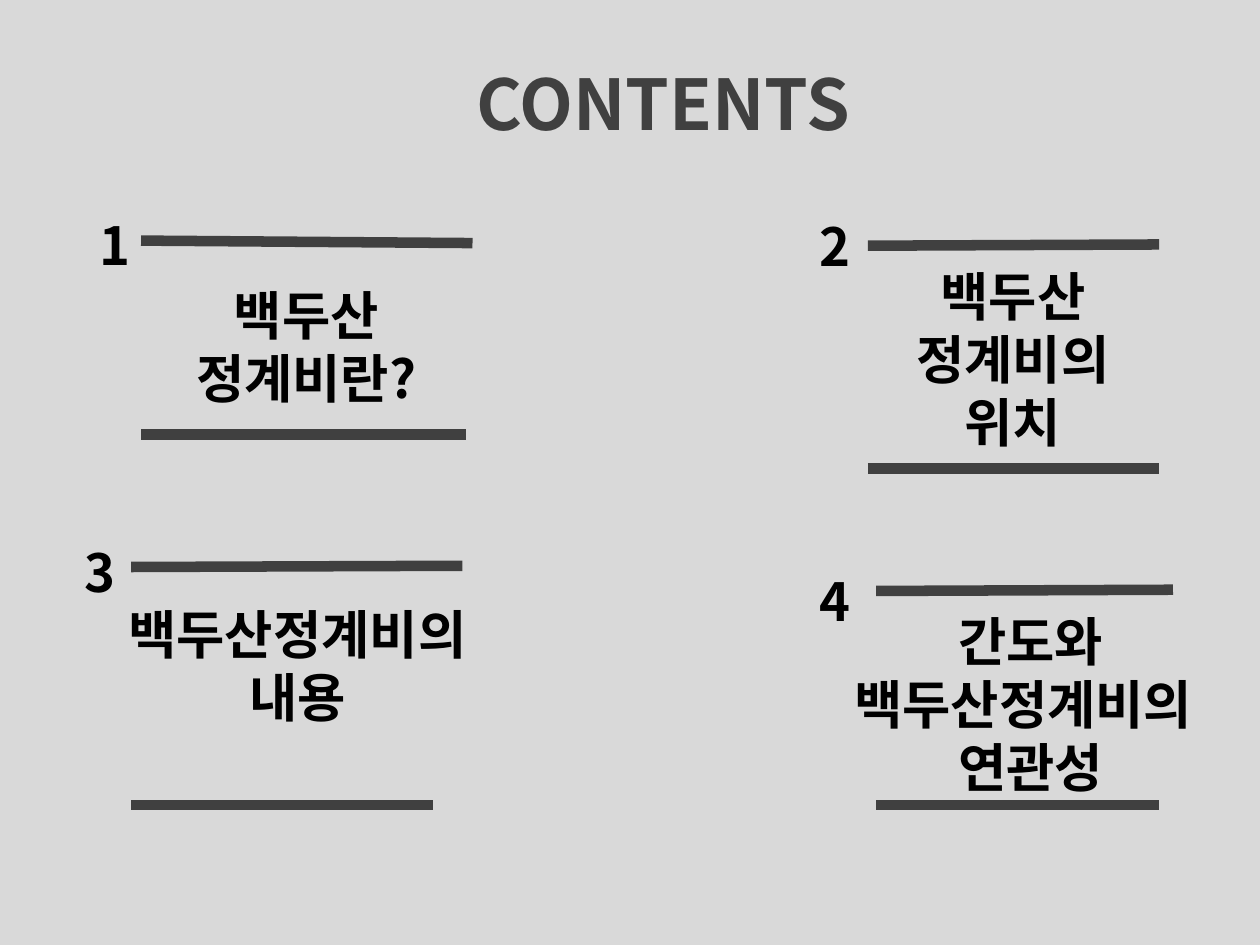
from dataclasses import dataclass

from lxml import etree
from pptx import Presentation
from pptx.dml.color import RGBColor
from pptx.enum.lang import MSO_LANGUAGE_ID
from pptx.enum.shapes import MSO_CONNECTOR
from pptx.enum.text import MSO_ANCHOR, MSO_AUTO_SIZE, PP_ALIGN
from pptx.oxml.ns import qn
from pptx.util import Pt

LEFT, CENTER = PP_ALIGN.LEFT, PP_ALIGN.CENTER
TOP = MSO_ANCHOR.TOP
NO_FIT = MSO_AUTO_SIZE.NONE
STRAIGHT = MSO_CONNECTOR.STRAIGHT
KOREAN = MSO_LANGUAGE_ID.KOREAN


@dataclass(frozen=True)
class Theme:
    """Colours, font and sizes of the deck."""
    background: RGBColor = RGBColor(0xD9, 0xD9, 0xD9)
    dark: RGBColor = RGBColor(0x40, 0x40, 0x40)
    ink: RGBColor = RGBColor(0, 0, 0)
    font: str = "Noto Sans CJK KR"
    title_size: int = 40
    topic_size: int = 30
    rule_width: int = 6


@dataclass(frozen=True)
class Topic:
    """One contents entry: box (left, top, width, height) and offsets in it."""
    lines: tuple
    box: tuple
    heading: tuple
    rule_left: float
    upper_rule: tuple
    lower_width: float


THEME = Theme()
HEADING_SIZE = (219, 153)
NUMBER_SIZE = (39, 44)
TOPICS = (
    Topic(("백두산", "정계비란?"), (49.7, 118, 220.3, 130.4),
          (15.8, 40.4), 30.9, (19.5, 20.9), 185.8),
    Topic(("백두산", "정계비의", "위치"), (461.5, 118.8, 200.9, 149),
          (7.9, 28.8), 34.5, (21.6, 20.9), 166.4),
    Topic(("백두산정계비의 내용",), (41, 305.3, 223.2, 154.7),
          (19.5, 35.3), 33.9, (18.7, 18), 172.8),
    Topic(("간도와 백두산정계비의 ", "연관성"), (461.5, 321.8, 208.8, 138.2),
          (18, 22.4), 39.2, (15.9, 15.2), 161.7),
)


def write_text(frame, lines, *, size, color, align=LEFT):
    """Fill a text frame with one bold paragraph per line."""
    frame.auto_size = NO_FIT
    frame.word_wrap = True
    frame.vertical_anchor = TOP
    for index, line in enumerate(lines):
        paragraph = frame.add_paragraph() if index else frame.paragraphs[0]
        paragraph.alignment = align
        run = paragraph.add_run()
        run.text = line
        font = run.font
        font.name, font.size, font.bold = THEME.font, Pt(size), True
        font.color.rgb = color
        font.language_id = KOREAN
        latin = run._r.rPr.find(qn("a:latin"))
        east_asian = etree.Element(qn("a:ea"), typeface=THEME.font)
        latin.addnext(east_asian)


def add_label(slide, left, top, size, lines, align=LEFT):
    """Add a topic text box at a place given in points."""
    label = slide.shapes.add_textbox(Pt(left), Pt(top), *map(Pt, size))
    write_text(label.text_frame, lines, size=THEME.topic_size,
               color=THEME.ink, align=align)


def add_rule(slide, *ends):
    """Draw a thick rule between two points."""
    rule = slide.shapes.add_connector(STRAIGHT, *map(Pt, ends))
    rule.line.color.rgb = THEME.dark
    rule.line.width = Pt(THEME.rule_width)
    etree.SubElement(rule._element.spPr, qn("a:effectLst"))


def add_title(slide, box):
    """Place the slide title in its placeholder, on a single line."""
    title = slide.shapes.title
    title.left, title.top, title.width, title.height = map(Pt, box)
    title.text_frame.margin_right = Pt(0)
    write_text(title.text_frame, ("CONTENTS",), size=THEME.title_size,
               color=THEME.dark)


def add_topic(slide, number, topic):
    """Place a numbered topic between its two rules."""
    left, top, width, height = topic.box
    dx, dy = topic.heading
    start, bottom = left + topic.rule_left, top + height
    first_y, last_y = topic.upper_rule
    add_label(slide, left + dx, top + dy, HEADING_SIZE, topic.lines, CENTER)
    add_rule(slide, start, top + first_y, left + width, top + last_y)
    add_rule(slide, start, bottom, start + topic.lower_width, bottom)
    add_label(slide, left, top, NUMBER_SIZE, (str(number),))


def main():
    """Build and save the contents slide."""
    deck = Presentation()
    deck.slide_width, deck.slide_height = Pt(720), Pt(540)
    slide = deck.slides.add_slide(deck.slide_layouts.get_by_name("Title Only"))
    fill = slide.background.fill
    fill.solid()
    fill.fore_color.rgb = THEME.background
    add_title(slide, (265, 31, 235, 55.4))
    for number, topic in enumerate(TOPICS, 1):
        add_topic(slide, number, topic)
    deck.save("out.pptx")


if __name__ == "__main__":
    main()
